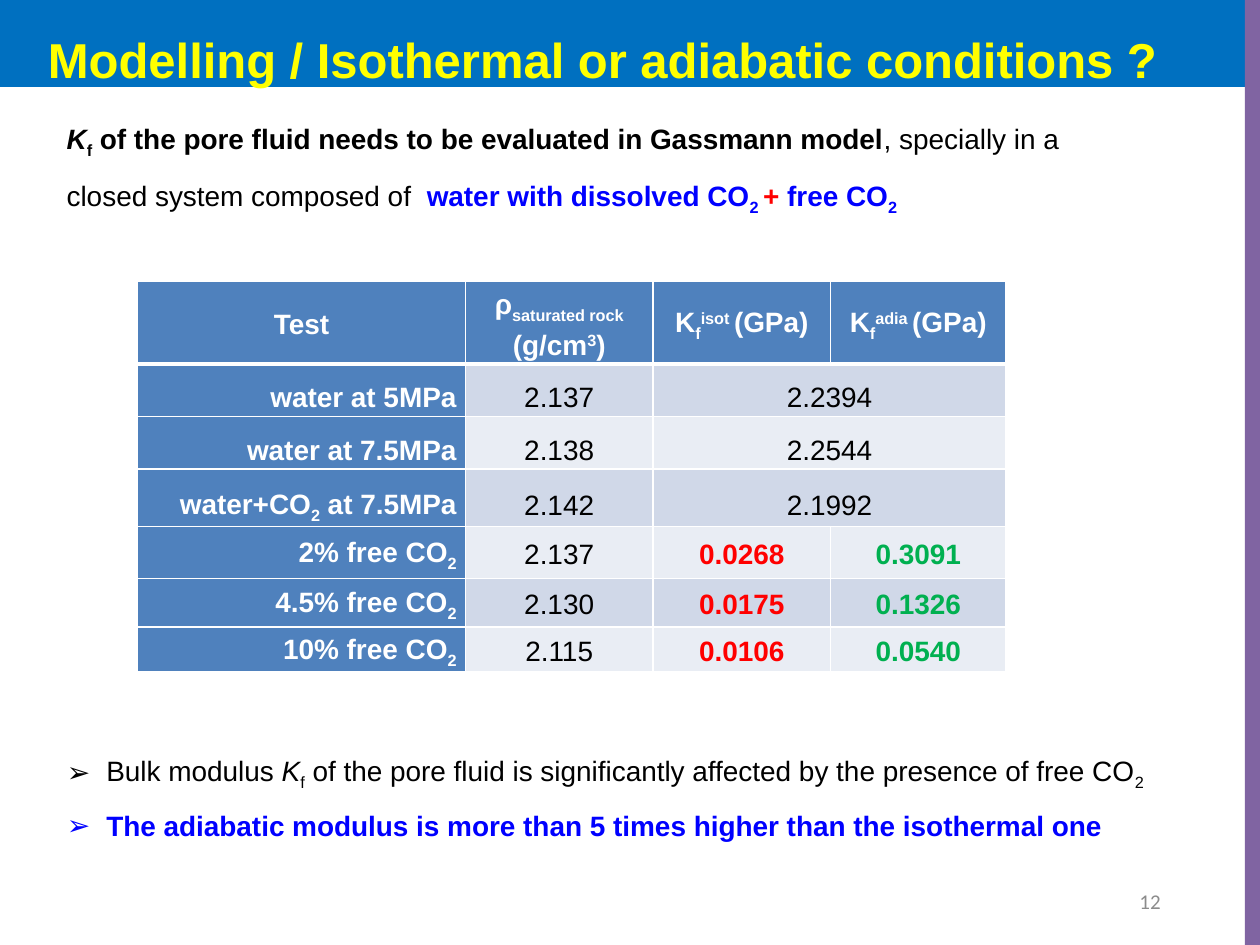
import pptx
import pptx.util
import pptx.dml.color
import pptx.enum.text
import pptx.enum.shapes
import lxml.etree

Pt = pptx.util.Pt
Align = pptx.enum.text.PP_ALIGN
Anchor = pptx.enum.text.MSO_ANCHOR
NS = "{http://schemas.openxmlformats.org/drawingml/2006/main}"
BLUE = "0000FF"


def hue(code):
    return pptx.dml.color.RGBColor.from_string(code)


def put(para, text, size=16, color="000000", bold=False, italic=False,
        face="Arial", align=Align.LEFT, space=1.0):
    para.alignment = align
    para.line_spacing = space
    para.space_before = Pt(0)
    for i, part in enumerate(text.split("_")):
        for j, piece in enumerate(part.split("^")):
            if not piece:
                continue
            run = para.add_run()
            run.text = piece
            font = run.font
            font.name, font.size = face, Pt(size)
            font.bold, font.italic = bold, italic
            font.color.rgb = hue(color)
            base = -25000 if i % 2 else 30000 if j % 2 else 0
            if base:
                font._element.set("baseline", str(base))


deck = pptx.Presentation()
deck.slide_width, deck.slide_height = Pt(720), Pt(540)
slide = deck.slides.add_slide(deck.slide_layouts[1])
title, body = slide.placeholders

stripe = slide.shapes.add_shape(
    pptx.enum.shapes.MSO_SHAPE.RECTANGLE, Pt(711.4), Pt(0), Pt(8.6), Pt(540))
stripe.shadow.inherit = False
stripe.fill.solid()
stripe.fill.fore_color.rgb = hue("8064A2")
stripe.line.fill.background()

title.left, title.top, title.width, title.height = Pt(0), Pt(0), Pt(711.4), Pt(49.7)
title.fill.solid()
title.fill.fore_color.rgb = hue("0070C0")
frame = title.text_frame
frame.auto_size = pptx.enum.text.MSO_AUTO_SIZE.NONE
frame.vertical_anchor = Anchor.TOP
frame.margin_left, frame.margin_top, frame.margin_bottom = Pt(27.4), Pt(7), Pt(0)
put(frame.paragraphs[0], "Modelling / Isothermal or adiabatic conditions ?",
    size=28, color="FFFF00", bold=True, space=1.3)

intro = slide.shapes.add_textbox(Pt(31), Pt(54.7), Pt(609), Pt(62)).text_frame
intro.word_wrap = True
para = intro.paragraphs[0]
for text, look in [
    ("K", {"bold": True, "italic": True}),
    ("_f_ of the pore fluid needs to be evaluated in Gassmann model", {"bold": True}),
    (", specially in a closed system composed of  ", {}),
    ("water with dissolved CO_2 _", {"bold": True, "color": BLUE}),
    ("+ ", {"bold": True, "color": "FF0000"}),
    ("free CO_2_", {"bold": True, "color": BLUE}),
]:
    put(para, text, space=1.5, **look)

rows = [
    ("Test", "ρ_saturated rock_ (g/cm^3^)", "K_f_^isot ^(GPa)", "K_f_^adia ^(GPa)"),
    ("water at 5MPa", "2.137", "2.2394"),
    ("water at 7.5MPa", "2.138", "2.2544"),
    ("water+CO_2_ at 7.5MPa", "2.142", "2.1992"),
    ("2% free CO_2_", "2.137", "0.0268", "0.3091"),
    ("4.5% free CO_2_", "2.130", "0.0175", "0.1326"),
    ("10% free CO_2_", "2.115", "0.0106", "0.0540"),
]
widths = [187.2, 107.3, 101.5, 100.1]
heights = [42, 30, 30, 33, 29.5, 28, 25.2]
table = slide.shapes.add_table(
    len(rows), len(widths), Pt(78.7), Pt(160.8), Pt(sum(widths)), Pt(sum(heights))).table
for col, width in zip(table.columns, widths):
    col.width = Pt(width)
for row, height in zip(table.rows, heights):
    row.height = Pt(height)

for r, texts in enumerate(rows):
    for c in range(len(widths)):
        cell = table.cell(r, c)
        cell.margin_left = cell.margin_right = Pt(5)
        cell.margin_top = cell.margin_bottom = Pt(0)
        cell.vertical_anchor = Anchor.MIDDLE
        props = cell._tc.get_or_add_tcPr()
        for side in "LRTB":
            thick = (r, side) in [(0, "B"), (1, "T")]
            edge = lxml.etree.SubElement(
                props, NS + "ln" + side, w=str(Pt(3 if thick else 1)))
            paint = lxml.etree.SubElement(edge, NS + "solidFill")
            lxml.etree.SubElement(paint, NS + "srgbClr", val="FFFFFF")
        head = r == 0 or c == 0
        cell.fill.solid()
        cell.fill.fore_color.rgb = hue(
            "4F81BD" if head else "D0D8E8" if r % 2 else "E9EDF4")
        if c < len(texts):
            split = len(texts) == 4 and c > 1
            color = "FFFFFF" if head else "000000"
            if split and not head:
                color = "FF0000" if c == 2 else "00B050"
            put(cell.text_frame.paragraphs[0], texts[c], color=color,
                bold=head or split, space=1.5 if len(texts) == 3 else 1.15,
                align=Align.RIGHT if c == 0 and r else Align.CENTER)
    if len(texts) == 3:
        table.cell(r, 2).merge(table.cell(r, 3))

body.left, body.top, body.width, body.height = Pt(31), Pt(416.2), Pt(639.4), Pt(65.5)
frame = body.text_frame
frame.auto_size = pptx.enum.text.MSO_AUTO_SIZE.NONE
points = [
    [("Bulk modulus ", {}), ("K", {"italic": True}),
     ("_f_ of the pore fluid is significantly affected by the presence of free CO_2_", {})],
    [("The adiabatic modulus is more than 5 times higher than the isothermal one",
      {"bold": True, "color": BLUE})],
]
for n, parts in enumerate(points):
    para = frame.add_paragraph() if n else frame.paragraphs[0]
    props = para._p.get_or_add_pPr()
    props.set("marL", str(Pt(22.5)))
    props.set("indent", str(Pt(-22.5)))
    lxml.etree.SubElement(props, NS + "buFont", typeface="Arial")
    lxml.etree.SubElement(props, NS + "buChar", char="➢")
    for text, look in parts:
        put(para, text, space=1.5, **look)

foot = slide.shapes.add_textbox(Pt(508.3), Pt(500.4), Pt(162), Pt(28.8)).text_frame
foot.word_wrap = True
foot.vertical_anchor = Anchor.MIDDLE
put(foot.paragraphs[0], "12", size=12, color="8C8C8C", face="Calibri", align=Align.RIGHT)

deck.save("out.pptx")
